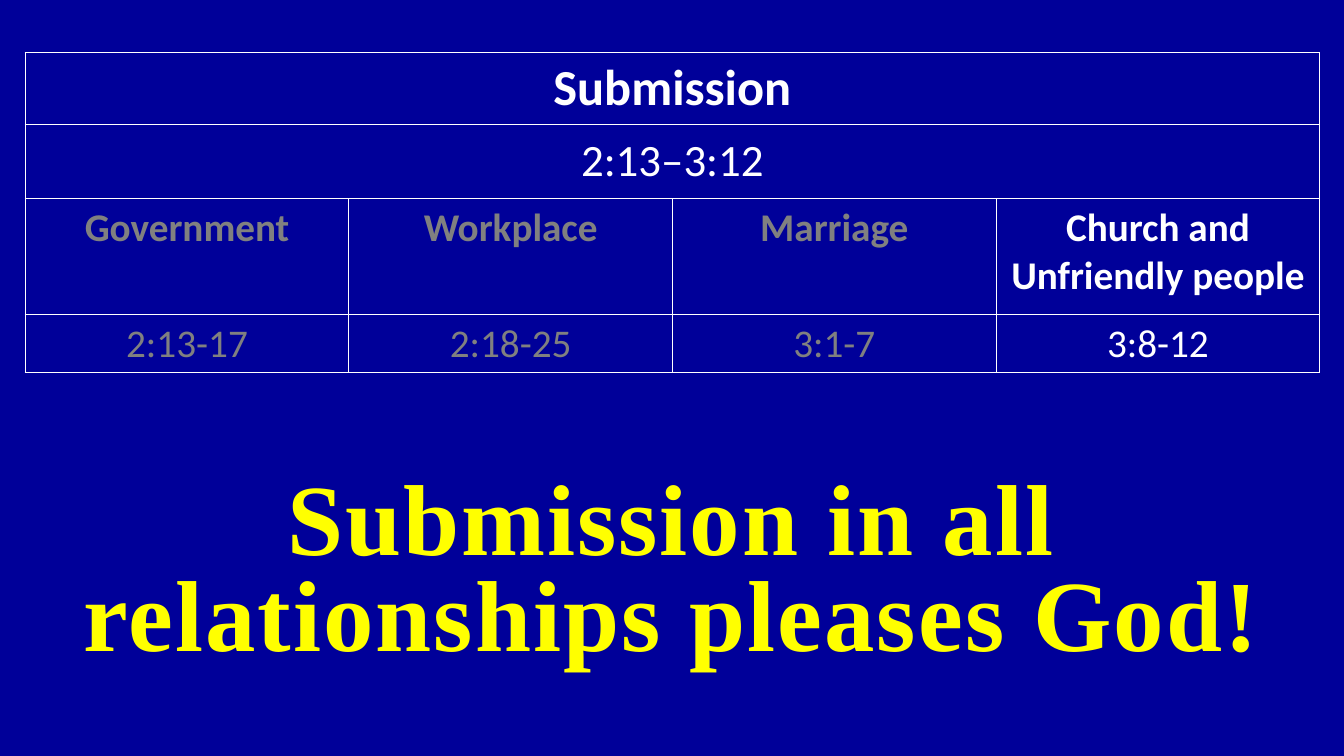
from lxml.etree import SubElement
from pptx import Presentation
from pptx.dml.color import RGBColor
from pptx.enum.text import MSO_ANCHOR, MSO_AUTO_SIZE, PP_ALIGN
from pptx.oxml import parse_xml
from pptx.oxml.ns import nsdecls, qn
from pptx.util import Inches, Pt

NAVY = RGBColor(0x00, 0x00, 0x99)
WHITE = RGBColor(0xFF, 0xFF, 0xFF)
GREY = RGBColor(0x80, 0x80, 0x80)
YELLOW = RGBColor(0xFF, 0xFF, 0x00)

TOPICS = [
    ("Government", "2:13-17", GREY),
    ("Workplace", "2:18-25", GREY),
    ("Marriage", "3:1-7", GREY),
    ("Church and Unfriendly people", "3:8-12", WHITE),
]
ROW_HEIGHTS = [0.71, 0.74, 1.15, 0.55]
COLUMN_WIDTH = 3.21


class SlideBuilder:
    """Hold the slide style and draw each kind of element."""

    table_font = "Calibri"
    title_font = "Times New Roman"

    def __init__(self, deck):
        self.page = deck.slides.add_slide(deck.slide_layouts[5])
        self.page.background.fill.solid()
        self.page.background.fill.fore_color.rgb = NAVY

    def style(self, font, name, size, color, bold):
        font.name = name
        font.size = Pt(size)
        font.bold = bold
        font.color.rgb = color

    def border(self, cell):
        properties = cell._tc.get_or_add_tcPr()
        for index, side in enumerate(("lnL", "lnR", "lnT", "lnB")):
            line = parse_xml(
                f'<a:{side} {nsdecls("a")} w="12700"><a:solidFill>'
                f'<a:srgbClr val="{WHITE}"/></a:solidFill></a:{side}>'
            )
            properties.insert(index, line)

    def fill_cell(self, cell, text, size, color, bold, anchor=MSO_ANCHOR.TOP):
        cell.text = text
        cell.vertical_anchor = anchor
        para = cell.text_frame.paragraphs[0]
        para.alignment = PP_ALIGN.CENTER
        self.style(para.font, self.table_font, size, color, bold)

    def table(self, left, top):
        frame = self.page.shapes.add_table(
            len(ROW_HEIGHTS), len(TOPICS), Inches(left), Inches(top),
            Inches(COLUMN_WIDTH * len(TOPICS)), Inches(sum(ROW_HEIGHTS)),
        )
        grid = frame.table
        for column in grid.columns:
            column.width = Inches(COLUMN_WIDTH)
        for row, height in zip(grid.rows, ROW_HEIGHTS):
            row.height = Inches(height)
        for cell in grid.iter_cells():
            cell.fill.background()
            self.border(cell)
        for row, (text, size, bold) in enumerate(
            [("Submission", 36, True), ("2:13–3:12", 32, False)]
        ):
            grid.cell(row, 0).merge(grid.cell(row, len(TOPICS) - 1))
            self.fill_cell(grid.cell(row, 0), text, size, WHITE, bold, MSO_ANCHOR.MIDDLE)
        for column, (topic, verses, color) in enumerate(TOPICS):
            self.fill_cell(grid.cell(2, column), topic, 28, color, True)
            self.fill_cell(grid.cell(3, column), verses, 28, color, False)

    def title(self, text, left, top, width, height):
        box = self.page.shapes.title
        box.left, box.top = Inches(left), Inches(top)
        box.width, box.height = Inches(width), Inches(height)
        box.fill.solid()
        box.fill.fore_color.rgb = NAVY
        frame = box.text_frame
        frame.word_wrap = True
        frame.auto_size = MSO_AUTO_SIZE.NONE
        frame.vertical_anchor = MSO_ANCHOR.MIDDLE
        para = frame.paragraphs[0]
        para.alignment = PP_ALIGN.CENTER
        para.line_spacing = 0.8
        span = para.add_run()
        span.text = text
        self.style(span.font, self.title_font, 72, YELLOW, True)
        self.text_shadow(span)

    def text_shadow(self, span):
        properties = span._r.get_or_add_rPr()
        properties.set("spc", "150")
        effects = parse_xml(f'<a:effectLst {nsdecls("a")}/>')
        shadow = SubElement(
            effects, qn("a:outerShdw"), blurRad="38100", dist="38100", dir="2700000"
        )
        SubElement(shadow, qn("a:srgbClr"), val="000000")
        properties.find(qn("a:solidFill")).addnext(effects)


def main():
    deck = Presentation()
    deck.slide_width, deck.slide_height = Inches(13.33), Inches(7.5)
    builder = SlideBuilder(deck)
    builder.title("Submission in all relationships pleases God!", 0.4, 4.69, 12.53, 2.02)
    builder.table(0.25, 0.52)
    deck.save("out.pptx")


if __name__ == "__main__":
    main()
